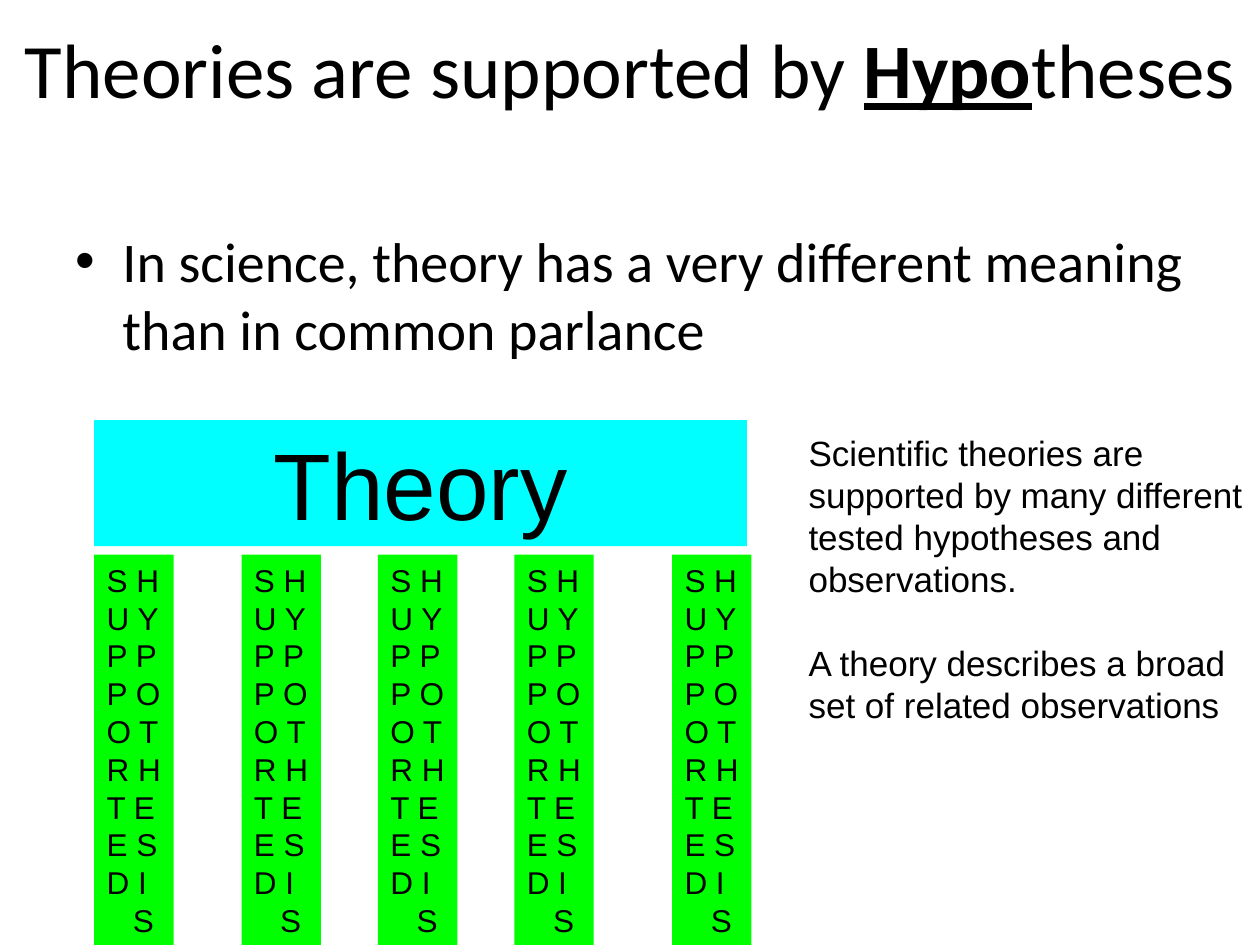
"""Build a slide showing a theory resting on pillars of supported hypotheses."""
from itertools import zip_longest

from lxml import etree
from pptx import Presentation, util as u
from pptx.dml import color
from pptx.enum import shapes, text
from pptx.oxml import ns

TITLE = [("Theories are supported by ", {}),
         ("Hypo", {"bold": True, "underline": True}),
         ("theses", {})]
BULLET = "In science, theory has a very different meaning than in common parlance"
BEAM = "Theory"
PILLAR_WORDS = ("SUPPORTED", "HYPOTHESIS")
NOTES = ["Scientific theories are supported by many different tested hypotheses and observations.",
         "A theory describes a broad set of related observations"]

THEME = {
    "ink": color.RGBColor.from_string("000000"),
    "beam": color.RGBColor.from_string("00FFFF"),
    "pillar": color.RGBColor.from_string("00FF00"),
    "title": ("Calibri", 44),
    "bullet": ("Calibri", 32),
    "big": ("Arial", 54),
    "letters": ("Arial", 18),
    "notes": ("Arial", 20),
}

PAGE_SIZE = (25.4, 19.05)
TITLE_AREA = (0, 0, 25.4, 2.74)
BULLET_AREA = (1.27, 4.45, 22.86, 3.18)
BEAM_AREA = (1.9, 8.47, 13.16, 2.54)
NOTES_AREA = (16.05, 8.57, 9.35, 7.09)
PILLAR_LEFTS = (1.9, 4.87, 7.62, 10.37, 13.55)
PILLAR_TOP, PILLAR_WIDTH, PILLAR_HEIGHT = 11.18, 1.6, 7.87
HANGING, LETTER_INDENT = 0.95, 0.53

GROW = {"auto_size": text.MSO_AUTO_SIZE.SHAPE_TO_FIT_TEXT}
LEFT = {"alignment": text.PP_ALIGN.LEFT}
CENTER = {"alignment": text.PP_ALIGN.CENTER}


def apply(target, values):
    for name, value in values.items():
        setattr(target, name, value)


def add_box(page, area, fill=None, **frame_format):
    lengths = [u.Cm(value) for value in area]
    if fill:
        box = page.shapes.add_shape(shapes.MSO_SHAPE.RECTANGLE, *lengths)
        box.fill.solid()
        box.fill.fore_color.rgb = THEME[fill]
        box.line.fill.background()
        box.shadow.inherit = False
    else:
        box = page.shapes.add_textbox(*lengths)
    defaults = {"word_wrap": True, "vertical_anchor": text.MSO_ANCHOR.TOP}
    apply(box.text_frame, defaults | frame_format)
    return box.text_frame


def write(para, spans, style, para_format):
    apply(para, para_format)
    family, size = THEME[style]
    for words, emphasis in spans:
        span = para.add_run()
        span.text = words
        apply(span.font, {"name": family, "size": u.Pt(size)} | emphasis)
        span.font.color.rgb = THEME["ink"]


def write_lines(frame, lines, style, para_format):
    for number, line in enumerate(lines):
        para = frame.add_paragraph() if number else frame.paragraphs[0]
        write(para, [(line, {})], style, para_format)


def indent(para, margin, first_line=0):
    properties = para._p.get_or_add_pPr()
    properties.set("marL", str(u.Cm(margin)))
    properties.set("indent", str(u.Cm(first_line)))
    return properties


def add_bullet(para):
    properties = indent(para, HANGING, -HANGING)
    etree.SubElement(properties, ns.qn("a:buFont")).set("typeface", "Arial")
    etree.SubElement(properties, ns.qn("a:buChar")).set("char", "•")


def add_pillar(page, left):
    area = (left, PILLAR_TOP, PILLAR_WIDTH, PILLAR_HEIGHT)
    frame = add_box(page, area, "pillar", **GROW, word_wrap=False)
    rows = [" ".join(pair).strip() for pair in zip_longest(*PILLAR_WORDS, fillvalue="")]
    write_lines(frame, rows, "letters", LEFT)
    indent(frame.paragraphs[-1], LETTER_INDENT)


def main():
    deck = Presentation()
    deck.slide_width, deck.slide_height = map(u.Cm, PAGE_SIZE)
    page = deck.slides.add_slide(deck.slide_layouts[6])

    title = add_box(page, TITLE_AREA, vertical_anchor=text.MSO_ANCHOR.MIDDLE)
    write(title.paragraphs[0], TITLE, "title", CENTER)

    body = add_box(page, BULLET_AREA)
    write_lines(body, [BULLET], "bullet", LEFT | {"space_before": u.Pt(6.4)})
    add_bullet(body.paragraphs[0])

    for left in PILLAR_LEFTS:
        add_pillar(page, left)

    beam = add_box(page, BEAM_AREA, "beam", **GROW)
    write_lines(beam, [BEAM], "big", CENTER)

    notes = add_box(page, NOTES_AREA, **GROW)
    write_lines(notes, NOTES, "notes", LEFT)
    notes.paragraphs[-1].space_before = u.Pt(24)

    deck.save("out.pptx")


if __name__ == "__main__":
    main()
